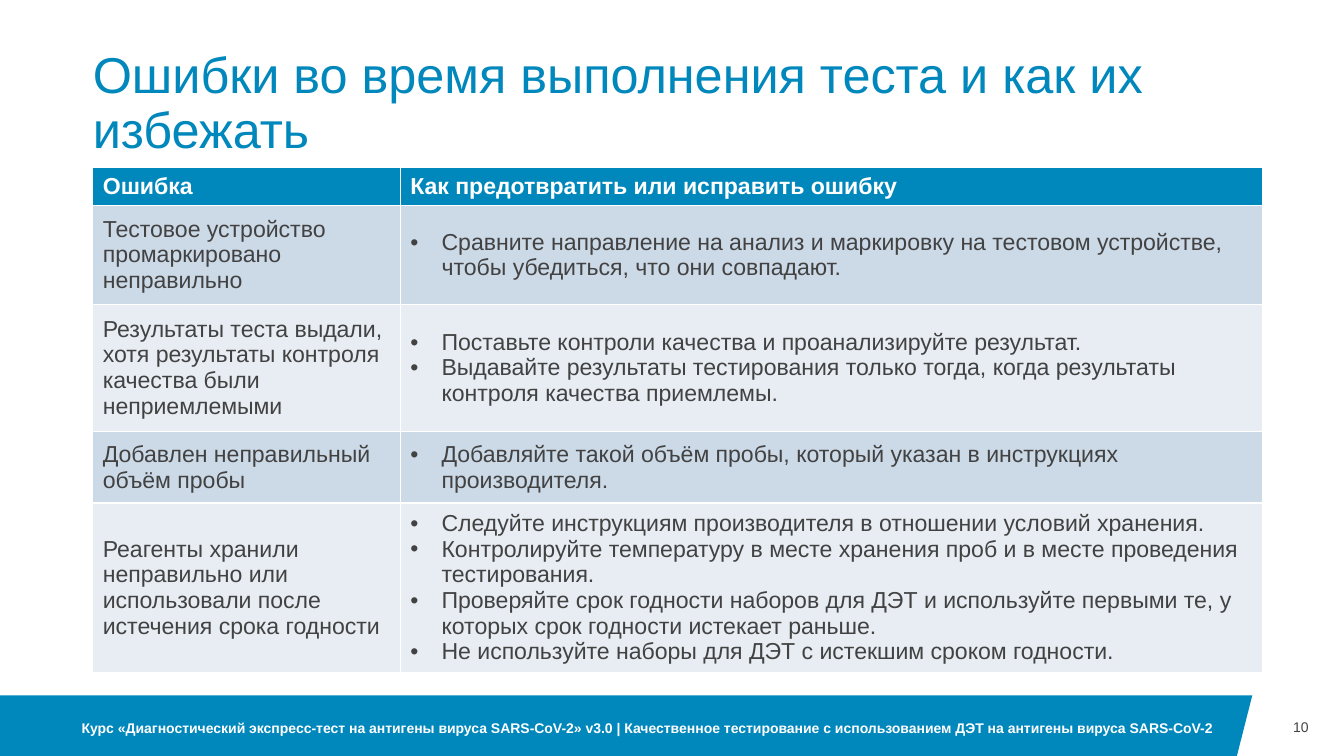
from dataclasses import dataclass

from lxml import etree
from pptx import Presentation
from pptx.dml.color import RGBColor
from pptx.enum import text
from pptx.oxml import ns
from pptx.util import Pt

PX = 9144  # EMU per px, 100 px to the inch


@dataclass(frozen=True)
class Theme:
    font: str = "Arial"
    blue: str = "0087BC"
    dark: str = "424242"
    white: str = "FFFFFF"
    bands: tuple = ("CCD9E7", "E7EDF3")
    title_size: float = 36
    table_size: float = 16.5
    footer_size: float = 10


THEME = Theme()
TITLE = "Ошибки во время выполнения теста и как их избежать"
HEADER = ("Ошибка", "Как предотвратить или исправить ошибку")
ERRORS = [
    ("Тестовое устройство промаркировано неправильно",
     ["Сравните направление на анализ и маркировку на тестовом устройстве, "
      "чтобы убедиться, что они совпадают."]),
    ("Результаты теста выдали, хотя результаты контроля качества были неприемлемыми",
     ["Поставьте контроли качества и проанализируйте результат.",
      "Выдавайте результаты тестирования только тогда, когда результаты "
      "контроля качества приемлемы."]),
    ("Добавлен неправильный объём пробы",
     ["Добавляйте такой объём пробы, который указан в инструкциях производителя."]),
    ("Реагенты хранили неправильно или использовали после истечения срока годности",
     ["Следуйте инструкциям производителя в отношении условий хранения.",
      "Контролируйте температуру в месте хранения проб и в месте проведения тестирования.",
      "Проверяйте срок годности наборов для ДЭТ и используйте первыми те, "
      "у которых срок годности истекает раньше.",
      "Не используйте наборы для ДЭТ с истекшим сроком годности."]),
]
COLUMN_WIDTHS = (305, 855)
ROW_HEIGHTS = (38, 98, 126, 71, 168)
FOOTER = ("Курс «Диагностический экспресс-тест на антигены вируса SARS-CoV-2» v3.0 | "
          "Качественное тестирование с использованием ДЭТ на антигены вируса SARS-CoV-2")


def emu(box):
    return [length * PX for length in box]


def style(paragraph, size, color, bold=False):
    font = paragraph.font
    font.name, font.size, font.bold = THEME.font, Pt(size), bold
    font.color.rgb = RGBColor.from_string(color)


def prepare_frame(frame, anchor):
    """Make a wrapping text frame without margins."""
    frame.margin_left = frame.margin_right = frame.margin_top = frame.margin_bottom = 0
    frame.word_wrap = True
    frame.auto_size = text.MSO_AUTO_SIZE.NONE
    frame.vertical_anchor = anchor


def add_bullet(paragraph, indent):
    properties = paragraph._p.get_or_add_pPr()
    properties.set("marL", str(indent * PX))
    properties.set("indent", str(-indent * PX))
    etree.SubElement(properties, ns.qn("a:buFont"), typeface=THEME.font)
    etree.SubElement(properties, ns.qn("a:buChar"), char="•")


def add_title(slide, box):
    title = slide.shapes.title
    title.left, title.top, title.width, title.height = emu(box)
    prepare_frame(title.text_frame, text.MSO_ANCHOR.BOTTOM)
    title.text_frame.text = TITLE
    paragraph = title.text_frame.paragraphs[0]
    paragraph.alignment = text.PP_ALIGN.LEFT
    paragraph.line_spacing = 0.9
    style(paragraph, THEME.title_size, THEME.blue)


def fill_cell(cell, lines, fill, color, bold=False, bulleted=False):
    cell.fill.solid()
    cell.fill.fore_color.rgb = RGBColor.from_string(fill)
    cell.vertical_anchor = text.MSO_ANCHOR.MIDDLE
    cell.text_frame.text = "\n".join(lines)
    for paragraph in cell.text_frame.paragraphs:
        style(paragraph, THEME.table_size, color, bold)
        if bulleted:
            add_bullet(paragraph, 31)


def add_error_table(slide, left, top):
    box = (left, top, sum(COLUMN_WIDTHS), sum(ROW_HEIGHTS))
    table = slide.shapes.add_table(len(ROW_HEIGHTS), len(COLUMN_WIDTHS), *emu(box)).table
    for column, width in zip(table.columns, COLUMN_WIDTHS):
        column.width = width * PX
    for row, height in zip(table.rows, ROW_HEIGHTS):
        row.height = height * PX
    for index, heading in enumerate(HEADER):
        fill_cell(table.cell(0, index), [heading], THEME.blue, THEME.white, bold=True)
    for index, (error, remedies) in enumerate(ERRORS):
        band = THEME.bands[index % 2]
        fill_cell(table.cell(index + 1, 0), [error], band, THEME.dark)
        fill_cell(table.cell(index + 1, 1), remedies, band, THEME.dark, bulleted=True)


def add_label(slide, box, wording, color, bold=False, alignment=text.PP_ALIGN.LEFT):
    frame = slide.shapes.add_textbox(*emu(box)).text_frame
    prepare_frame(frame, text.MSO_ANCHOR.MIDDLE)
    frame.text = wording
    frame.paragraphs[0].alignment = alignment
    style(frame.paragraphs[0], THEME.footer_size, color, bold)


def add_footer(slide, left, top, width, height):
    """Draw the slanted band with the course name and the page number beside it."""
    right, bottom, slant = left + width, top + height, 16
    builder = slide.shapes.build_freeform(left, top, scale=PX)
    builder.add_line_segments([(right, top), (right - slant, bottom), (left, bottom)])
    band = builder.convert_to_shape()
    band.shadow.inherit = False
    band.fill.solid()
    band.fill.fore_color.rgb = RGBColor.from_string(THEME.blue)
    band.line.fill.background()
    add_label(slide, (left + 81, top + 5, 1171, 55), FOOTER, THEME.white, bold=True)
    add_label(slide, (right, top, 56, height), "10", THEME.dark,
              alignment=text.PP_ALIGN.RIGHT)


def main():
    presentation = Presentation()
    presentation.slide_width, presentation.slide_height = emu((1333, 750))
    slide = presentation.slides.add_slide(presentation.slide_layouts.get_by_name("Title Only"))
    add_title(slide, (92, 55, 1150, 103))
    add_error_table(slide, 92, 166)
    add_footer(slide, 0, 690, 1242, 63)
    presentation.save("out.pptx")


if __name__ == "__main__":
    main()
